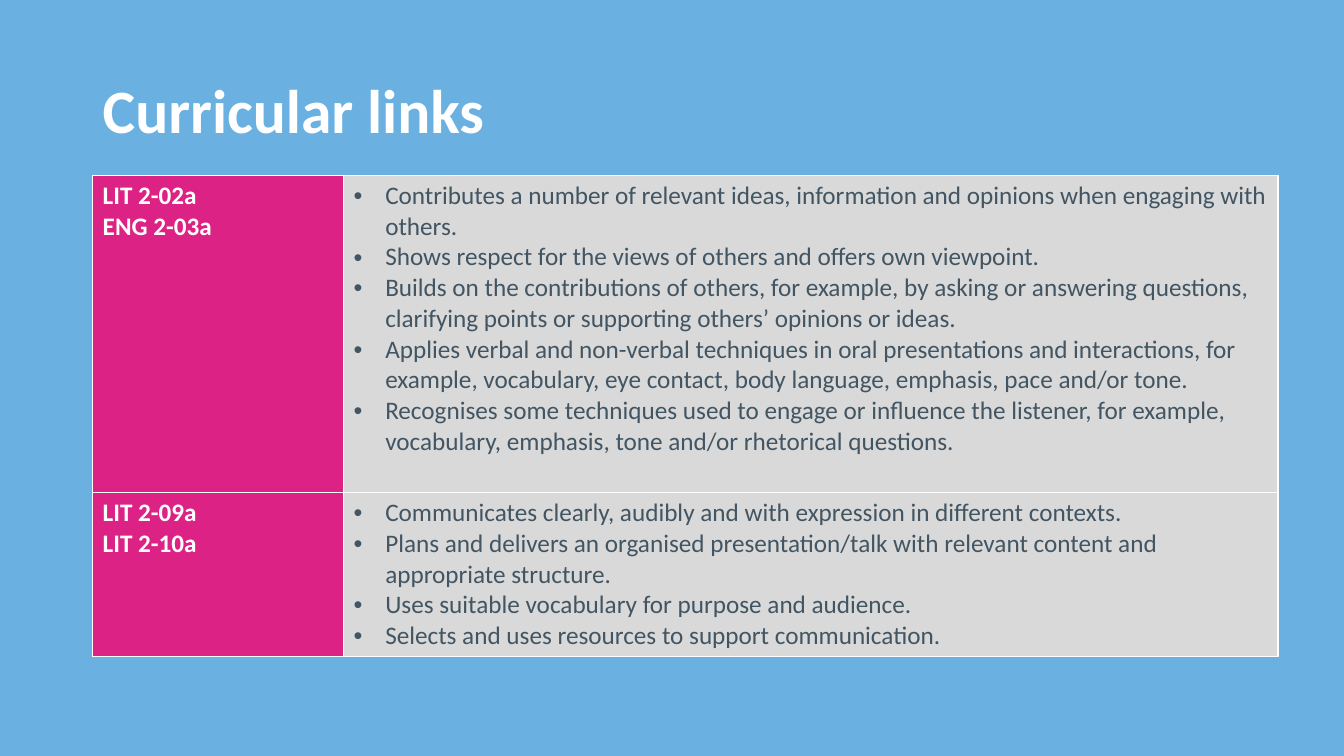
from lxml import etree
from pptx import Presentation
from pptx.dml.color import RGBColor
from pptx.enum.text import MSO_ANCHOR, PP_ALIGN
from pptx.oxml.ns import qn
from pptx.util import Pt

LEFT = PP_ALIGN.LEFT
MIDDLE = MSO_ANCHOR.MIDDLE
BLUE = RGBColor(0x6A, 0xB1, 0xE2)
PINK = RGBColor(0xDC, 0x22, 0x84)
GREY = RGBColor(0xD9, 0xD9, 0xD9)
SLATE = RGBColor(0x42, 0x55, 0x63)
WHITE = RGBColor(0xFF, 0xFF, 0xFF)
FACE = "Calibri"
EDGE = Pt(66.2)
WIDTHS = [179.3, 667.4]
HEIGHTS = [226.5, 117.2]
LINKS = [
    (["LIT 2-02a", "ENG 2-03a"], [
        "Contributes a number of relevant ideas, information and opinions when engaging with others.",
        "Shows respect for the views of others and offers own viewpoint.",
        "Builds on the contributions of others, for example, by asking or answering questions, "
        "clarifying points or supporting others’ opinions or ideas.",
        "Applies verbal and non-verbal techniques in oral presentations and interactions, "
        "for example, vocabulary, eye contact, body language, emphasis, pace and/or tone.",
        "Recognises some techniques used to engage or influence the listener, for example, "
        "vocabulary, emphasis, tone and/or rhetorical questions.",
    ]),
    (["LIT 2-09a", "LIT 2-10a"], [
        "Communicates clearly, audibly and with expression in different contexts.",
        "Plans and delivers an organised presentation/talk with relevant content and appropriate structure.",
        "Uses suitable vocabulary for purpose and audience.",
        "Selects and uses resources to support communication.",
    ]),
]


def set_font(para, size, color, bold):
    font = para.font
    font.name = FACE
    font.size = Pt(size)
    font.bold = bold
    font.color.rgb = color


def add_bullet(para):
    props = para._p.get_or_add_pPr()
    props.set("marL", str(Pt(22.5)))
    props.set("indent", str(Pt(-22.5)))
    etree.SubElement(props, qn("a:buFont")).set("typeface", "Arial")
    etree.SubElement(props, qn("a:buChar")).set("char", "•")


def add_border(cell):
    props = cell._tc.get_or_add_tcPr()
    for spot, side in enumerate(("lnL", "lnR", "lnT", "lnB")):
        line = etree.Element(qn(f"a:{side}"), w=str(Pt(1)))
        fill = etree.SubElement(line, qn("a:solidFill"))
        etree.SubElement(fill, qn("a:srgbClr")).set("val", str(WHITE))
        props.insert(spot, line)


def fill_cell(cell, lines, back, color, bold, bullet):
    cell.fill.solid()
    cell.fill.fore_color.rgb = back
    add_border(cell)
    frame = cell.text_frame
    frame.text = "\n".join(lines)
    for para in frame.paragraphs:
        if bullet:
            add_bullet(para)
        set_font(para, 18, color, bold)


def set_title(slide, text):
    title = slide.shapes.title
    title.left, title.top = EDGE, Pt(28.8)
    title.width, title.height = Pt(800.6), Pt(104.4)
    frame = title.text_frame
    frame.text = text
    frame.vertical_anchor = MIDDLE
    para = frame.paragraphs[0]
    para.alignment = LEFT
    para.line_spacing = 0.9
    set_font(para, 44, WHITE, True)


def add_links(slide):
    table = slide.shapes.add_table(
        len(LINKS), len(WIDTHS), EDGE, Pt(125.3),
        Pt(sum(WIDTHS)), Pt(sum(HEIGHTS))).table
    for col, width in zip(table.columns, WIDTHS):
        col.width = Pt(width)
    for row, height, (codes, skills) in zip(table.rows, HEIGHTS, LINKS):
        row.height = Pt(height)
        fill_cell(row.cells[0], codes, PINK, WHITE, True, False)
        fill_cell(row.cells[1], skills, GREY, SLATE, False, True)


def main():
    deck = Presentation()
    deck.slide_width, deck.slide_height = Pt(960), Pt(540)
    slide = deck.slides.add_slide(deck.slide_layouts[5])
    slide.background.fill.solid()
    slide.background.fill.fore_color.rgb = BLUE
    set_title(slide, "Curricular links")
    add_links(slide)
    deck.save("out.pptx")


if __name__ == "__main__":
    main()
